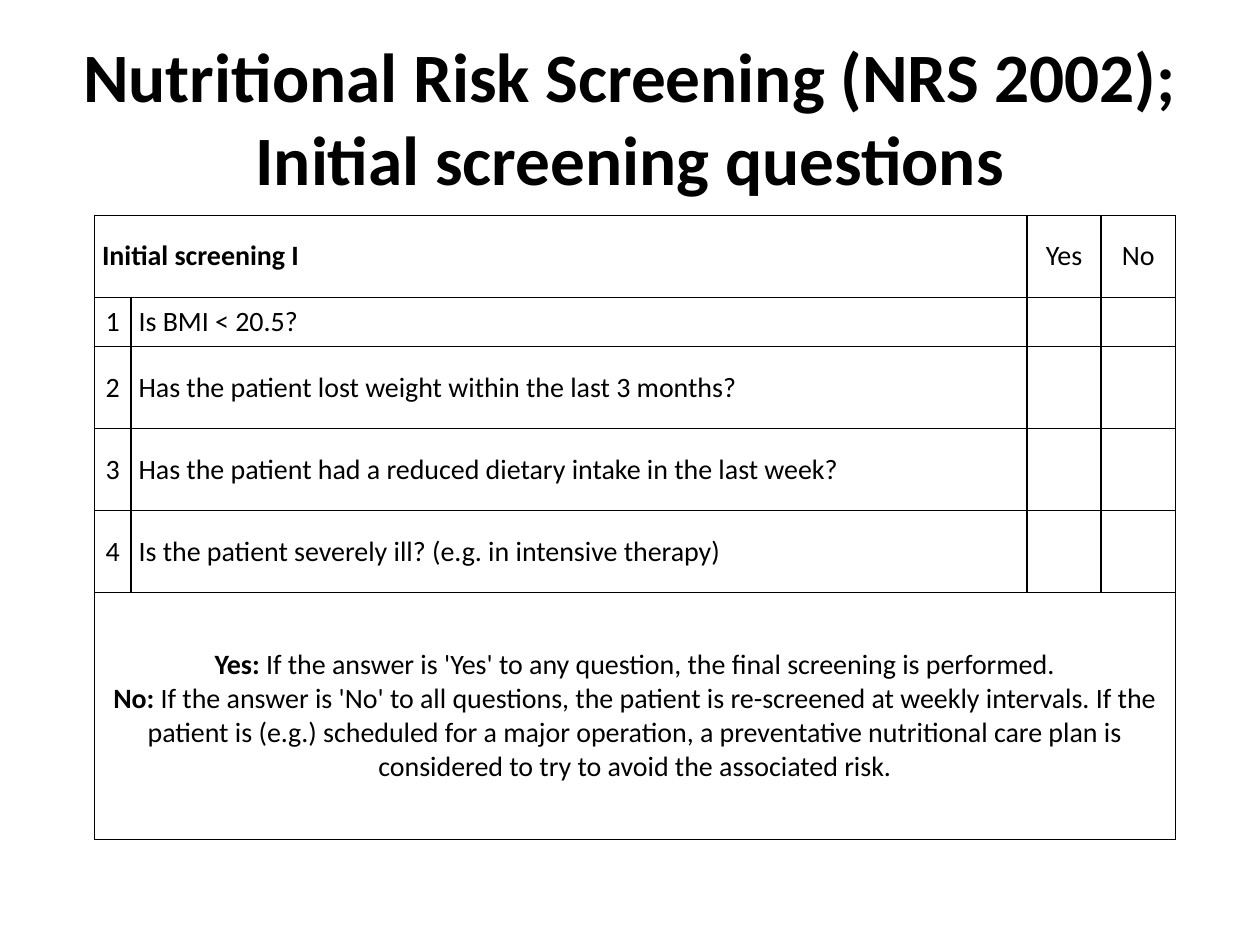
from pptx import Presentation
from pptx.dml.color import RGBColor
from pptx.enum.text import MSO_ANCHOR as Anchor, PP_ALIGN as Align
from pptx.oxml import parse_xml
from pptx.oxml.ns import nsdecls
from pptx.util import Inches, Pt

BLACK = RGBColor(0, 0, 0)
FONT = "Calibri"
WIDE, HIGH = Inches(10), Inches(7.5)

# Table grid in inches
COLS = [0.29, 7.11, 0.59, 0.59]
ROWS = [0.65, 0.39, 0.65, 0.65, 0.65, 1.96]
PAD = Inches(0.06)

TITLE = "Nutritional Risk Screening (NRS 2002); Initial screening questions"
ASKS = [
    "Is BMI < 20.5?",
    "Has the patient lost weight within the last 3 months?",
    "Has the patient had a reduced dietary intake in the last week?",
    "Is the patient severely ill? (e.g. in intensive therapy)",
]
RULES = [
    ("Yes:", " If the answer is 'Yes' to any question, the final screening is performed."),
    ("No:", " If the answer is 'No' to all questions, the patient is re-screened at "
            "weekly intervals. If the patient is (e.g.) scheduled for a major operation, "
            "a preventative nutritional care plan is considered to try to avoid the "
            "associated risk."),
]


def set_all(item, form):
    for name, value in form.items():
        setattr(item, name, value)


def add_run(para, text, size=16, bold=False):
    run = para.add_run()
    run.text = text
    set_all(run.font, {"name": FONT, "size": Pt(size), "bold": bold})
    run.font.color.rgb = BLACK


def add_title(slide):
    title = slide.shapes.title
    set_all(title, {"left": int(WIDE * 0.05), "top": int(HIGH * 0.04),
                    "width": int(WIDE * 0.9), "height": Inches(1.25)})
    title.text_frame.vertical_anchor = Anchor.MIDDLE
    para = title.text_frame.paragraphs[0]
    para.alignment = Align.CENTER
    add_run(para, TITLE, 39.6, True)


def style_cell(cell):
    """Clear the fill and rule all four sides."""
    cell.fill.background()
    props = cell._tc.get_or_add_tcPr()
    for at, side in enumerate("LRTB"):
        props.insert(at, parse_xml(
            f'<a:ln{side} {nsdecls("a")} w="{Pt(1)}"><a:solidFill>'
            f'<a:srgbClr val="{BLACK}"/></a:solidFill></a:ln{side}>'))
    set_all(cell, {"margin_top": 0, "margin_bottom": 0})


def fill_cell(cell, text="", align=Align.CENTER, bold=False):
    edges = ("left", "right", "top", "bottom")
    set_all(cell, {f"margin_{edge}": PAD for edge in edges})
    cell.vertical_anchor = Anchor.MIDDLE
    para = cell.text_frame.paragraphs[0]
    para.alignment = align
    if text:
        add_run(para, text, bold=bold)
    return para


def add_grid(slide):
    frame = slide.shapes.add_table(
        len(ROWS), len(COLS), Inches(0.75), Inches(1.71),
        Inches(sum(COLS)), Inches(sum(ROWS)))
    grid = frame.table
    set_all(grid, {"first_row": False, "horz_banding": False})
    for col, width in zip(grid.columns, COLS):
        col.width = Inches(width)
    for row, height in zip(grid.rows, ROWS):
        row.height = Inches(height)
    for cell in grid.iter_cells():
        style_cell(cell)
    return grid


def fill_grid(grid):
    # Heading row
    grid.cell(0, 0).merge(grid.cell(0, 1))
    fill_cell(grid.cell(0, 0), "Initial screening I", Align.LEFT, True)
    for col, word in enumerate(("Yes", "No"), 2):
        fill_cell(grid.cell(0, col), word)

    # Numbered questions
    for row, ask in enumerate(ASKS, 1):
        fill_cell(grid.cell(row, 0), str(row))
        fill_cell(grid.cell(row, 1), ask, Align.LEFT)

    # What follows from the answers
    last = len(ROWS) - 1
    grid.cell(last, 0).merge(grid.cell(last, len(COLS) - 1))
    para = fill_cell(grid.cell(last, 0))
    for at, (word, text) in enumerate(RULES):
        if at:
            para.add_line_break()
        add_run(para, word, bold=True)
        add_run(para, text)


def main():
    deck = Presentation()
    set_all(deck, {"slide_width": WIDE, "slide_height": HIGH})
    slide = deck.slides.add_slide(deck.slide_layouts[5])
    add_title(slide)
    fill_grid(add_grid(slide))
    deck.save("out.pptx")


if __name__ == "__main__":
    main()
